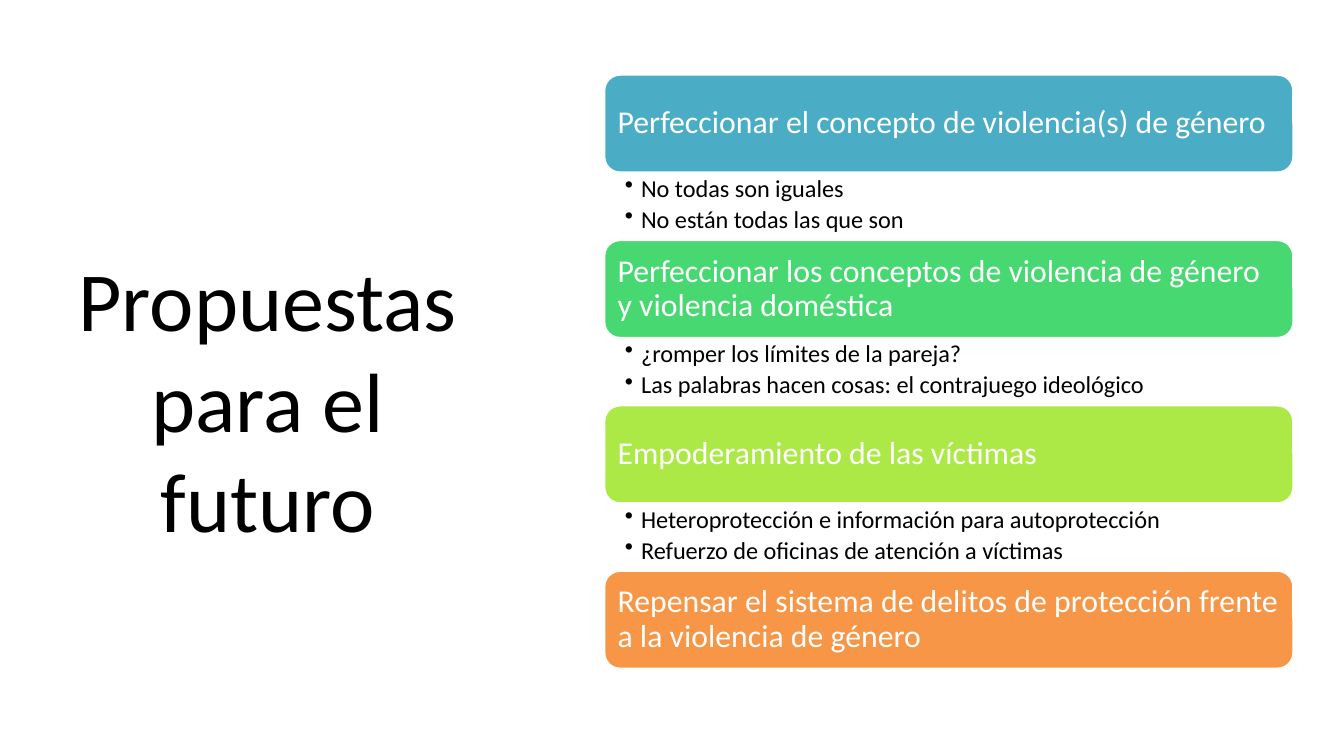
from pptx import Presentation
from pptx.dml.color import RGBColor
from pptx.enum.shapes import MSO_SHAPE as Shape
from pptx.enum.text import MSO_ANCHOR as Anchor, PP_ALIGN as Align
from pptx.oxml.ns import qn
from pptx.util import Pt
from lxml.etree import SubElement

COLORS = {
    "white": "FFFFFF", "black": "000000", "blue": "4BACC6",
    "green": "47D872", "lime": "ACE946", "orange": "F79646",
}
TITLE = "Propuestas para el futuro"
PROPOSALS = [
    ("blue", "Perfeccionar el concepto de violencia(s) de género",
     ["No todas son iguales", "No están todas las que son"]),
    ("green", "Perfeccionar los conceptos de violencia de género y violencia doméstica",
     ["¿romper los límites de la pareja?",
      "Las palabras hacen cosas: el contrajuego ideológico"]),
    ("lime", "Empoderamiento de las víctimas",
     ["Heteroprotección e información para autoprotección",
      "Refuerzo de oficinas de atención a víctimas"]),
    ("orange", "Repensar el sistema de delitos de protección frente a la violencia de género", []),
]
LEFT, TOP, WIDTH = 323.3, 39.6, 370
HEADING_HEIGHT, DETAILS_HEIGHT = 53.3, 35.3
BULLET_INDENT = 8.64


def rgb(name):
    return RGBColor.from_string(COLORS[name])


def write(shape, lines, size, color="black", align=Align.LEFT, anchor=Anchor.TOP,
          insets=(7.2, 3.6, 7.2, 3.6), spacing=1.0, after=0, bullet=False):
    """Fill a shape with one paragraph per line; insets run left, top, right, bottom."""
    frame = shape.text_frame
    frame.word_wrap = True
    frame.vertical_anchor = anchor
    (frame.margin_left, frame.margin_top,
     frame.margin_right, frame.margin_bottom) = map(Pt, insets)
    for index, line in enumerate(lines):
        paragraph = frame.add_paragraph() if index else frame.paragraphs[0]
        paragraph.text = line
        paragraph.alignment = align
        paragraph.line_spacing = spacing
        paragraph.space_after = Pt(after)
        if bullet:
            properties = paragraph._p.get_or_add_pPr()
            properties.set("marL", str(Pt(BULLET_INDENT)))
            properties.set("indent", str(-Pt(BULLET_INDENT)))
            SubElement(properties, qn("a:buChar"), char="•")
        font = paragraph.font
        font.name, font.size = "Calibri", Pt(size)
        font.color.rgb = rgb(color)


deck = Presentation()
deck.slide_width, deck.slide_height = Pt(720), Pt(405)
slide = deck.slides.add_slide(deck.slide_layouts[6])

title = slide.shapes.add_textbox(Pt(31), Pt(128.9), Pt(224.6), Pt(233.3))
write(title, [TITLE], 45, align=Align.CENTER)

for row, (color, heading, details) in enumerate(PROPOSALS):
    top = TOP + row * (HEADING_HEIGHT + DETAILS_HEIGHT)
    band = slide.shapes.add_shape(Shape.ROUNDED_RECTANGLE, Pt(LEFT), Pt(top),
                                  Pt(WIDTH), Pt(HEADING_HEIGHT))
    band.shadow.inherit = False
    band.fill.solid()
    band.fill.fore_color.rgb = rgb(color)
    band.line.color.rgb = rgb("white")
    band.line.width = Pt(2)
    write(band, [heading], 17, "white", anchor=Anchor.MIDDLE, insets=(5, 5, 5, 5), spacing=0.9)
    if details:
        detail_list = slide.shapes.add_textbox(Pt(LEFT), Pt(top + HEADING_HEIGHT),
                                               Pt(WIDTH), Pt(DETAILS_HEIGHT))
        write(detail_list, details, 13, insets=(11.5, 1.5, 9.4, 1.5),
              spacing=0.9, after=2.6, bullet=True)

deck.save("out.pptx")
